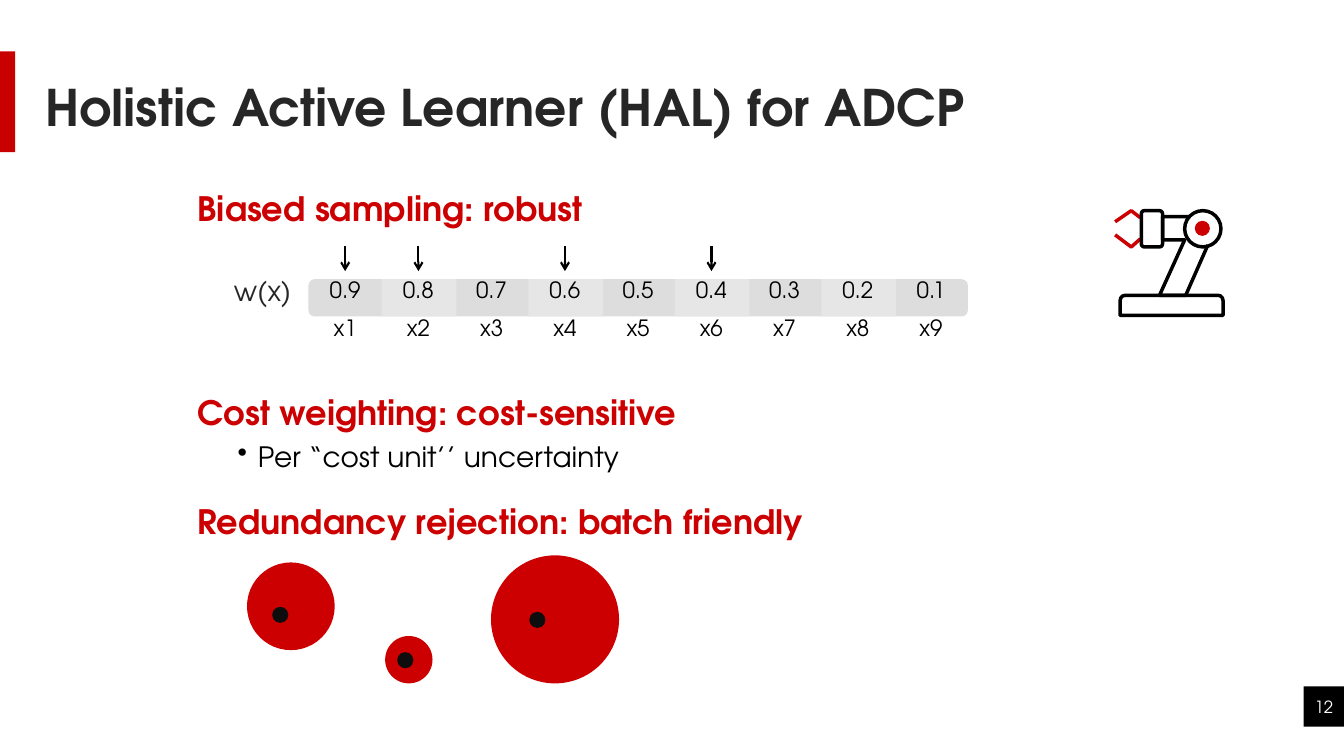
"""Build the slide on the Holistic Active Learner."""
from dataclasses import dataclass
from typing import Any, Optional

import lxml.etree
import pptx
import pptx.dml.color
import pptx.enum.shapes
import pptx.enum.text
import pptx.oxml.ns
import pptx.util

COLORS = {"accent": "C80000", "red": "CC0000", "black": "000000", "white": "FFFFFF",
          "ink": "262626", "sample": "0D0D0D", "bar": "DDDDDD", "stripe": "E6E6E6"}
FONT = "TeX Gyre Adventor"
NO_GRID_STYLE = "{2D5ABB26-0587-4C30-8999-92F81FD0307C}"
SHAPE = pptx.enum.shapes.MSO_SHAPE
CENTER = pptx.enum.text.PP_ALIGN.CENTER
MIDDLE = pptx.enum.text.MSO_ANCHOR.MIDDLE
Inches = pptx.util.Inches
Pt = pptx.util.Pt

BAR_LEFT, BAR_TOP, BAR_WIDTH, BAR_HEIGHT = 3.06, 2.77, 6.54, 0.37
WEIGHTS = ["0.9", "0.8", "0.7", "0.6", "0.5", "0.4", "0.3", "0.2", "0.1"]
COLUMN = BAR_WIDTH / len(WEIGHTS)
PICKED_COLUMNS = [0, 1, 3, 5]


@dataclass
class Label:
    text: str
    box: tuple[float, float, float, float]
    size: float
    color: str
    bold: bool = False
    centered: bool = False
    middle: bool = False
    line_spacing: Optional[float] = None
    before: Optional[float] = None
    after: Optional[float] = None
    bullet: bool = False


@dataclass
class Figure:
    kind: Any
    box: tuple[float, float, float, float]
    fill: Optional[str] = None
    line: Optional[str] = None
    corner: Optional[float] = None


@dataclass
class Outline:
    points: list[tuple[float, float]]
    color: str


def rgb(name: str) -> pptx.dml.color.RGBColor:
    return pptx.dml.color.RGBColor.from_string(COLORS[name])


def style_text(paragraph: Any, size: float, color: str, bold: bool = False) -> None:
    paragraph.font.name = FONT
    paragraph.font.size = Pt(size)
    paragraph.font.bold = bold
    paragraph.font.color.rgb = rgb(color)


def add_label(shapes: Any, label: Label) -> None:
    frame = shapes.add_textbox(*map(Inches, label.box)).text_frame
    frame.word_wrap = True
    if label.middle:
        frame.vertical_anchor = MIDDLE
    paragraph = frame.paragraphs[0]
    paragraph.text = label.text
    style_text(paragraph, label.size, label.color, label.bold)
    if label.centered:
        paragraph.alignment = CENTER
    if label.line_spacing:
        paragraph.line_spacing = label.line_spacing
    if label.before:
        paragraph.space_before = Pt(label.before)
    if label.after:
        paragraph.space_after = Pt(label.after)
    if label.bullet:
        paragraph.level = 1
        properties = paragraph._p.get_or_add_pPr()
        properties.set("marL", str(Inches(0.6)))
        properties.set("indent", str(Inches(-0.2)))
        mark = lxml.etree.SubElement(properties, pptx.oxml.ns.qn("a:buChar"))
        mark.set("char", "•")
        properties.insert_element_before(mark, "a:tabLst", "a:defRPr", "a:extLst")


def paint(shape: Any, fill: Optional[str], line: Optional[str]) -> None:
    shape.shadow.inherit = False
    if fill:
        shape.fill.solid()
        shape.fill.fore_color.rgb = rgb(fill)
    else:
        shape.fill.background()
    if line:
        shape.line.color.rgb = rgb(line)
        shape.line.width = Pt(2.5)
    else:
        shape.line.fill.background()


def add_figure(shapes: Any, figure: Figure) -> None:
    shape = shapes.add_shape(figure.kind, *map(Inches, figure.box))
    if figure.corner is not None:
        shape.adjustments[0] = figure.corner
    paint(shape, figure.fill, figure.line)


def add_outline(shapes: Any, outline: Outline) -> None:
    start, *rest = [(Inches(x), Inches(y)) for x, y in outline.points]
    builder = shapes.build_freeform(*start)
    builder.add_line_segments(rest, close=False)
    paint(builder.convert_to_shape(), None, outline.color)


def add_row(shapes: Any, top: float, values: list[str]) -> None:
    frame = shapes.add_table(1, len(values), Inches(BAR_LEFT), Inches(top),
                             Inches(BAR_WIDTH), Inches(BAR_HEIGHT))
    table = frame.table
    table.first_row = table.horz_banding = False
    table._tbl.tblPr.find(pptx.oxml.ns.qn("a:tableStyleId")).text = NO_GRID_STYLE
    table.rows[0].height = Inches(0.24)
    frame.height = Inches(BAR_HEIGHT)
    for cell, value in zip(table.rows[0].cells, values):
        cell.fill.background()
        cell.margin_top = cell.margin_bottom = 0
        paragraph = cell.text_frame.paragraphs[0]
        paragraph.text = value
        paragraph.alignment = CENTER
        style_text(paragraph, 16, "black")


def add_arrow(shapes: Any, x: float) -> None:
    arrow = shapes.add_connector(pptx.enum.shapes.MSO_CONNECTOR.STRAIGHT,
                                 Inches(x), Inches(2.44), Inches(x), Inches(2.69))
    arrow.line.color.rgb = rgb("black")
    arrow.line.width = Pt(1.5)
    head = lxml.etree.SubElement(arrow.line._get_or_add_ln(), pptx.oxml.ns.qn("a:tailEnd"))
    head.set("type", "arrow")
    lxml.etree.SubElement(arrow._element.spPr, pptx.oxml.ns.qn("a:effectLst"))


def heading(text: str, top: float) -> Label:
    return Label(text, (1.86, top, 10.78, 0.54), 24, "red", bold=True,
                 line_spacing=1.2, before=10)


MARGIN_BLOCKS = [Figure(SHAPE.RECTANGLE, (0, 0.51, 0.15, 1), "accent"),
                 Figure(SHAPE.RECTANGLE, (12.93, 6.81, 0.4, 0.4), "black")]
REGIONS = [Figure(SHAPE.OVAL, (x, y, size, size), "red")
           for x, y, size in [(2.45, 5.58, 0.87), (3.82, 6.31, 0.47), (4.87, 5.51, 1.27)]]
SAMPLES = [Figure(SHAPE.OVAL, (x, y, 0.16, 0.16), "sample")
           for x, y in [(2.7, 6.02), (3.94, 6.47), (5.25, 6.07)]]
WEIGHT_BAR = [Figure(SHAPE.ROUNDED_RECTANGLE, (BAR_LEFT, BAR_TOP, BAR_WIDTH, BAR_HEIGHT), "bar")]
WEIGHT_BAR += [Figure(SHAPE.RECTANGLE, (BAR_LEFT + i * COLUMN, BAR_TOP, 0.74, BAR_HEIGHT), "stripe")
               for i in range(1, len(WEIGHTS), 2)]
LABELS = [
    Label("Holistic Active Learner (HAL) for ADCP", (0.35, 0.34, 11.5, 1.5), 36, "ink",
          bold=True, middle=True, line_spacing=0.9),
    Label("12", (12.86, 6.81, 0.54, 0.4), 12, "white", centered=True, middle=True),
    heading("Biased sampling: robust", 1.74),
    Label("w(x)", (2, 2.66, 1.21, 0.44), 20, "ink", centered=True),
    Label("Per “cost unit’’ uncertainty", (1.86, 4.24, 9.17, 0.44), 20, "black",
          line_spacing=1.2, after=9, bullet=True),
    heading("Cost weighting: cost-sensitive", 3.76),
    heading("Redundancy rejection: batch friendly", 4.84),
]
ARM_OUTLINES = [
    Outline([(11.31, 2.16), (11.22, 2.09), (11.06, 2.2)], "red"),
    Outline([(11.31, 2.37), (11.22, 2.45), (11.06, 2.33)], "red"),
    Outline([(11.79, 2.15), (11.53, 2.15), (11.53, 2.38), (11.75, 2.38),
             (11.5, 2.93), (11.76, 2.93), (11.98, 2.43)], "black"),
]
ARM_PARTS = [
    Figure(SHAPE.OVAL, (11.75, 2.09, 0.36, 0.36), line="black"),
    Figure(SHAPE.OVAL, (11.85, 2.19, 0.15, 0.15), "red"),
    Figure(SHAPE.ROUNDED_RECTANGLE, (11.32, 2.09, 0.21, 0.36), line="black", corner=0.14),
    Figure(SHAPE.ROUND_2_SAME_RECTANGLE, (11.11, 2.93, 1.02, 0.2), line="black", corner=0.25),
]


def main() -> None:
    deck = pptx.Presentation()
    deck.slide_width, deck.slide_height = Inches(13.33), Inches(7.5)
    shapes = deck.slides.add_slide(deck.slide_layouts[6]).shapes
    for figure in MARGIN_BLOCKS + REGIONS + SAMPLES:
        add_figure(shapes, figure)
    weight_bar = shapes.add_group_shape().shapes
    for figure in WEIGHT_BAR:
        add_figure(weight_bar, figure)
    add_row(shapes, 2.8, WEIGHTS)
    add_row(shapes, 3.17, [f"x{i}" for i in range(1, len(WEIGHTS) + 1)])
    for label in LABELS:
        add_label(shapes, label)
    for column in PICKED_COLUMNS:
        add_arrow(shapes, BAR_LEFT + (column + 0.5) * COLUMN)
    robot_arm = shapes.add_group_shape().shapes
    for outline in ARM_OUTLINES:
        add_outline(robot_arm, outline)
    for figure in ARM_PARTS:
        add_figure(robot_arm, figure)
    deck.save("out.pptx")


if __name__ == "__main__":
    main()
